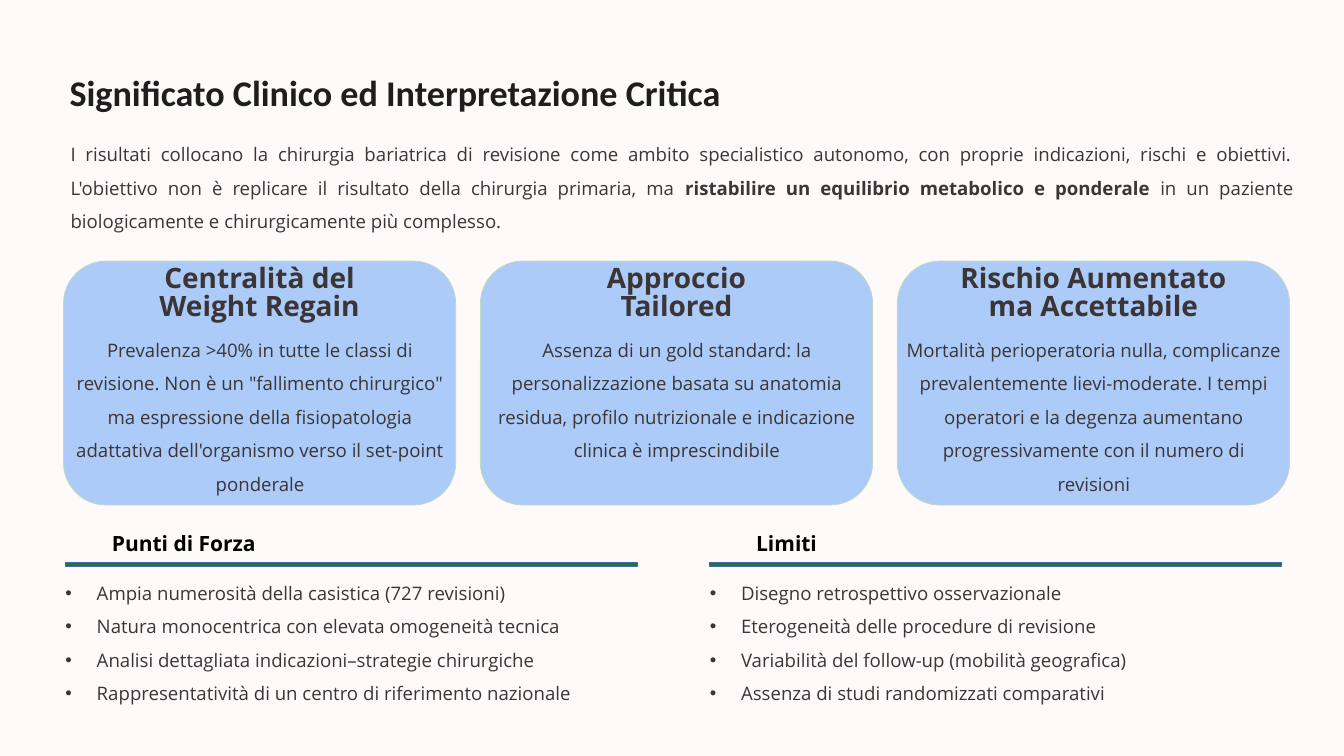
import pptx
import pptx.util
import pptx.dml.color
import pptx.enum.shapes
import pptx.enum.text
import lxml.etree
from pptx.oxml.ns import qn

Inches = pptx.util.Inches
Pt = pptx.util.Pt
RGBColor = pptx.dml.color.RGBColor
Kind = pptx.enum.shapes.MSO_SHAPE
Align = pptx.enum.text.PP_ALIGN

PAPER = RGBColor(0xFF, 0xFA, 0xFA)
TITLE = RGBColor(0x1F, 0x1E, 0x1E)
BODY = RGBColor(0x3B, 0x35, 0x35)
BLACK = RGBColor(0, 0, 0)
CARD = RGBColor(0xAC, 0xCB, 0xF9)
EDGE = RGBColor(0xBB, 0xDC, 0xC0)
GREEN = RGBColor(0x1A, 0x7A, 0x2A)
BLUE = RGBColor(0x4A, 0x66, 0xAC)


class Deck:
    """Holds the style and current slide, and draws each kind of element."""

    def __init__(self):
        self.file = pptx.Presentation()
        self.file.slide_width = Inches(13.33)
        self.file.slide_height = Inches(7.5)
        self.slide = self.file.slides.add_slide(self.file.slide_layouts[6])
        back = self.slide.background.fill
        back.solid()
        back.fore_color.rgb = PAPER

    def shape(self, kind, box, fill, line, width):
        item = self.slide.shapes.add_shape(kind, *map(Inches, box))
        item.shadow.inherit = False
        item.fill.solid()
        item.fill.fore_color.rgb = fill
        item.line.color.rgb = line
        item.line.width = Pt(width)
        return item

    def text(self, box, paras, size=13.3, color=BODY, bold=False, font="Open Sans",
             align=Align.LEFT, space=1.5, bullet=False):
        frame = self.slide.shapes.add_textbox(*map(Inches, box)).text_frame
        frame.word_wrap = True
        frame.margin_left = frame.margin_right = 0
        frame.margin_top = frame.margin_bottom = 0
        for i, runs in enumerate(paras):
            para = frame.add_paragraph() if i else frame.paragraphs[0]
            para.alignment = align
            para.line_spacing = space
            if bullet:
                self.bullet(para)
            for j, part in enumerate(runs):
                if part == "\n":
                    para.add_line_break()
                    continue
                run = para.add_run()
                run.text = part
                run.font.name = font
                run.font.size = Pt(size)
                run.font.color.rgb = color
                run.font.bold = bold or (len(runs) > 1 and j == 1)

    def bullet(self, para):
        props = para._p.get_or_add_pPr()
        props.set("marL", str(Inches(0.31)))
        props.set("indent", str(Inches(-0.31)))
        face = lxml.etree.SubElement(props, qn("a:buFont"))
        face.set("typeface", "Arial")
        mark = lxml.etree.SubElement(props, qn("a:buChar"))
        mark.set("char", "•")

    def card(self, left, head, body):
        item = self.shape(Kind.ROUNDED_RECTANGLE, (left, 2.59, 3.89, 2.42), CARD, EDGE, 0.6)
        item.adjustments[0] = 0.174
        self.text((left + 0.03, 2.65, 3.83, 0.58), [head], size=20, bold=True,
                  align=Align.CENTER, space=Pt(19.6))
        self.text((left + 0.07, 3.25, 3.76, 1.67), [[body]], align=Align.CENTER)

    def points(self, left, head, lines):
        self.shape(Kind.RECTANGLE, (left, 5.58, 5.67, 0.04), GREEN, BLUE, 0.75)
        self.text((left + 0.46, 5.32, 1.67, 0.19), [[head]], size=15, color=BLACK,
                  bold=True, space=Pt(13.8))
        self.text((left, 5.66, 5.83, 1.41), [[line] for line in lines], bullet=True)


def main():
    deck = Deck()
    deck.text((0.69, 0.68, 11.67, 0.59), [["Significato Clinico ed Interpretazione Critica"]],
              size=25.8, color=TITLE, bold=True, font="Calibri", space=Pt(32.5))
    deck.text((0.7, 1.31, 12.13, 1.13), [[
        "I risultati collocano la chirurgia bariatrica di revisione come ambito specialistico "
        "autonomo, con proprie indicazioni, rischi e obiettivi. L'obiettivo non è replicare il "
        "risultato della chirurgia primaria, ma ",
        "ristabilire un equilibrio metabolico e ponderale",
        " in un paziente biologicamente e chirurgicamente più complesso."]],
        align=Align.JUSTIFY)
    cards = [
        (["Centralità del", "\n", "Weight Regain"],
         "Prevalenza >40% in tutte le classi di revisione. Non è un \"fallimento chirurgico\" "
         "ma espressione della fisiopatologia adattativa dell'organismo verso il set-point "
         "ponderale"),
        (["Approccio", "\n", "Tailored"],
         "Assenza di un gold standard: la personalizzazione basata su anatomia residua, profilo "
         "nutrizionale e indicazione clinica è imprescindibile"),
        (["Rischio Aumentato", "\n", "ma Accettabile"],
         "Mortalità perioperatoria nulla, complicanze prevalentemente lievi-moderate. I tempi "
         "operatori e la degenza aumentano progressivamente con il numero di revisioni"),
    ]
    for i, (head, body) in enumerate(cards):
        deck.card(0.63 + 4.135 * i, head, body)
    lists = [
        ("Punti di Forza", [
            "Ampia numerosità della casistica (727 revisioni)",
            "Natura monocentrica con elevata omogeneità tecnica",
            "Analisi dettagliata indicazioni–strategie chirurgiche",
            "Rappresentatività di un centro di riferimento nazionale"]),
        ("Limiti", [
            "Disegno retrospettivo osservazionale",
            "Eterogeneità delle procedure di revisione",
            "Variabilità del follow-up (mobilità geografica)",
            "Assenza di studi randomizzati comparativi"]),
    ]
    for i, (head, lines) in enumerate(lists):
        deck.points(0.65 + 6.39 * i, head, lines)
    deck.file.save("out.pptx")


if __name__ == "__main__":
    main()
